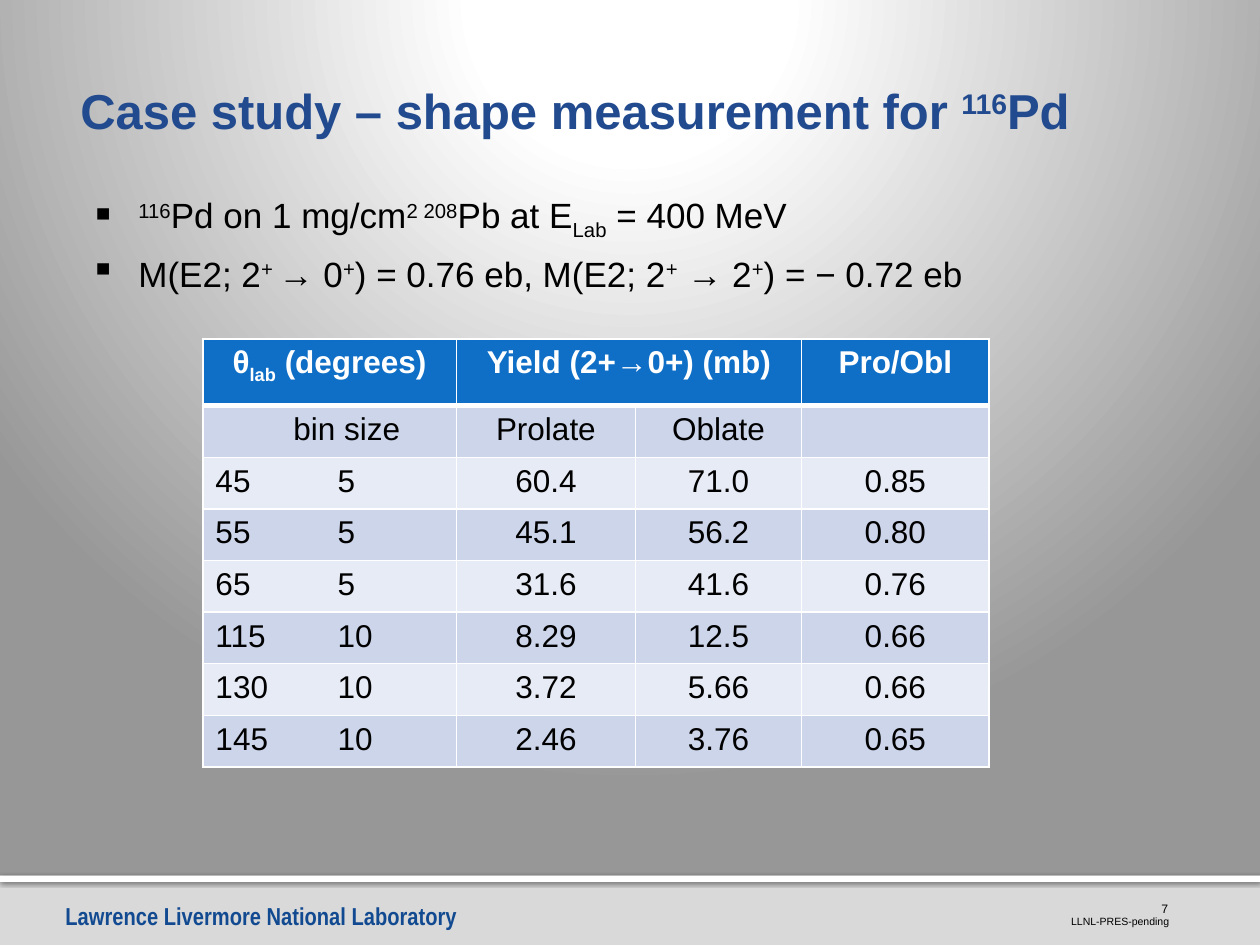
"""Build the slide on the shape measurement case study for 116Pd."""
from pptx import Presentation
from pptx.dml.color import RGBColor
from pptx.enum.shapes import MSO_SHAPE
from pptx.enum.text import MSO_ANCHOR, MSO_AUTO_SIZE, PP_ALIGN
from pptx.oxml import parse_xml
from pptx.oxml.ns import nsdecls, qn
from pptx.util import Cm, Pt

RECTANGLE = MSO_SHAPE.RECTANGLE
TOP, BOTTOM = MSO_ANCHOR.TOP, MSO_ANCHOR.BOTTOM
LEFT, CENTER, RIGHT = PP_ALIGN.LEFT, PP_ALIGN.CENTER, PP_ALIGN.RIGHT
FIT_SHAPE = MSO_AUTO_SIZE.SHAPE_TO_FIT_TEXT

BLACK = RGBColor(0x00, 0x00, 0x00)
WHITE = RGBColor(0xFF, 0xFF, 0xFF)
TITLE_BLUE = RGBColor(0x21, 0x4A, 0x8F)
FOOTER_BLUE = RGBColor(0x12, 0x4A, 0x91)
HEADER_BLUE = RGBColor(0x0F, 0x6F, 0xC6)
FOOTER_GRAY = RGBColor(0xD9, 0xD9, 0xD9)
EDGE_GRAY = RGBColor(0x97, 0x97, 0x97)
BANDS = (RGBColor(0xCC, 0xD5, 0xEA), RGBColor(0xE7, 0xEB, 0xF5))

SUPER, SUB = 30, -25
GRADIENT = ((0, WHITE), (20, WHITE), (100, EDGE_GRAY))

BARS = (
    (1.4, FOOTER_GRAY, 38, 3.1, 2),
    (0.13, WHITE, 60, 2.5, 0.8),
)
TITLE = [("Case study – shape measurement for ", 0), ("116", SUPER), ("Pd", 0)]
BULLETS = [
    [("116", SUPER), ("Pd on 1 mg/cm", 0), ("2 208", SUPER), ("Pb at E", 0),
     ("Lab", SUB), (" = 400 MeV", 0)],
    [("M(E2; 2", 0), ("+ ", SUPER), ("→ 0", 0), ("+", SUPER),
     (") = 0.76 eb, M(E2; 2", 0), ("+", SUPER), (" → 2", 0), ("+", SUPER),
     (") = − 0.72 eb", 0)],
]
HEADERS = {
    0: [("θ", 0), ("lab", SUB), (" (degrees)", 0)],
    1: [("Yield (2+→0+) (mb)", 0)],
    3: [("Pro/Obl", 0)],
}
ROWS = [
    ("bin size", "Prolate", "Oblate", ""),
    ("45\t5", "60.4", "71.0", "0.85"),
    ("55\t5", "45.1", "56.2", "0.80"),
    ("65\t5", "31.6", "41.6", "0.76"),
    ("115\t10", "8.29", "12.5", "0.66"),
    ("130\t10", "3.72", "5.66", "0.66"),
    ("145\t10", "2.46", "3.76", "0.65"),
]
COLUMN_WIDTHS = (5.11, 3.61, 3.35, 3.78)
HEADER_HEIGHT, ROW_HEIGHT = 1.35, 1.04
BIN_INDENT, BIN_TAB = 1.57, 2.46
BULLET_INDENT = 0.97


def drawing(tag, attributes="", content=""):
    return parse_xml(f'<a:{tag} {nsdecls("a")} {attributes}>{content}</a:{tag}>')


def solid(color, alpha=100):
    return f'<a:srgbClr val="{color}"><a:alpha val="{alpha * 1000}"/></a:srgbClr>'


def add_tab(paragraph, position):
    stop = f'<a:tab pos="{Cm(position)}" algn="l"/>'
    paragraph._p.get_or_add_pPr().append(drawing("tabLst", content=stop))


def add_runs(paragraph, runs, size, color, bold=False, font="Arial", align=LEFT):
    paragraph.alignment = align
    for text, baseline in runs:
        run = paragraph.add_run()
        run.text = text
        run.font.name, run.font.size, run.font.bold = font, Pt(size), bold
        run.font.color.rgb = color
        if baseline:
            run.font._element.set("baseline", str(baseline * 1000))


def add_box(slide, place, anchor=TOP, insets=(0.25, 0.13, 0.25, 0.13), wrap=True, grow=False):
    frame = slide.shapes.add_textbox(*map(Cm, place)).text_frame
    frame.word_wrap = wrap
    frame.vertical_anchor = anchor
    frame.margin_left, frame.margin_top, frame.margin_right, frame.margin_bottom = map(Cm, insets)
    if grow:
        frame.auto_size = FIT_SHAPE
    return frame


def paint_background(slide):
    slide.background.fill.gradient()
    gradient = slide.element.find(".//" + qn("a:gradFill"))
    for child in list(gradient):
        gradient.remove(child)
    stops = "".join(f'<a:gs pos="{at * 1000}">{solid(color)}</a:gs>' for at, color in GRADIENT)
    gradient.append(drawing("gsLst", content=stops))
    focus = '<a:fillToRect l="10000" t="-25000" r="10000" b="125000"/>'
    gradient.append(drawing("path", 'path="circle"', focus))


def add_bar(slide, height, color, alpha, blur, distance):
    shape = slide.shapes.add_shape(RECTANGLE, 0, Cm(17.65), Cm(25.4), Cm(height))
    shape.fill.solid()
    shape.fill.fore_color.rgb = color
    shape.line.fill.background()
    shadow = (f'<a:outerShdw blurRad="{Pt(blur)}" dist="{Pt(distance)}" dir="5400000" '
              f'rotWithShape="0">{solid(BLACK, alpha)}</a:outerShdw>')
    shape._element.spPr.append(drawing("effectLst", content=shadow))


def add_footer(slide):
    for bar in BARS:
        add_bar(slide, *bar)
    laboratory = add_box(slide, (1.07, 18.03, 8.48, 0.86), grow=True)
    add_runs(laboratory.paragraphs[0], [("Lawrence Livermore National Laboratory", 0)],
             14, FOOTER_BLUE, True, "Arial Narrow")
    release = add_box(slide, (21.56, 18.31, 2.26, 0.38), BOTTOM, (0, 0.13, 0.25, 0), False, True)
    add_runs(release.paragraphs[0], [("LLNL-PRES-pending", 0)], 6, BLACK, align=RIGHT)
    number = add_box(slide, (22.81, 18.03, 0.99, 0.43))
    add_runs(number.paragraphs[0], [("7", 0)], 7, BLACK, align=RIGHT)


def add_bullets(slide):
    frame = add_box(slide, (1.57, 3.78, 20.9, 2.18), grow=True)
    for index, runs in enumerate(BULLETS):
        paragraph = frame.add_paragraph() if index else frame.paragraphs[0]
        properties = paragraph._p.get_or_add_pPr()
        properties.set("marL", str(Cm(BULLET_INDENT)))
        properties.set("indent", str(-Cm(BULLET_INDENT)))
        properties.append(drawing("buChar", 'char="▪"'))
        add_tab(paragraph, BULLET_INDENT)
        paragraph.space_before = Pt(3 if index else 0)
        paragraph.space_after = Pt(3)
        add_runs(paragraph, runs, 20, BLACK)


def style_cell(cell, color, top, bottom):
    properties = cell._tc.get_or_add_tcPr()
    for side, width in (("L", 1), ("R", 1), ("T", top), ("B", bottom)):
        properties.append(drawing(f"ln{side}", f'w="{Pt(width)}"',
                                  f"<a:solidFill>{solid(WHITE)}</a:solidFill>"))
    cell.fill.solid()
    cell.fill.fore_color.rgb = color


def add_yield_table(slide):
    height = HEADER_HEIGHT + ROW_HEIGHT * len(ROWS)
    table = slide.shapes.add_table(len(ROWS) + 1, len(COLUMN_WIDTHS), Cm(4.09), Cm(6.83),
                                   Cm(sum(COLUMN_WIDTHS)), Cm(height)).table
    for column, width in zip(table.columns, COLUMN_WIDTHS):
        column.width = Cm(width)
    for index, row in enumerate(table.rows):
        row.height = Cm(ROW_HEIGHT if index else HEADER_HEIGHT)
        for cell in row.cells:
            color = BANDS[(index - 1) % 2] if index else HEADER_BLUE
            style_cell(cell, color, 3 if index == 1 else 1, 1 if index else 3)
    table.cell(0, 1).merge(table.cell(0, 2))
    for column, runs in HEADERS.items():
        add_runs(table.cell(0, column).text_frame.paragraphs[0], runs, 18, WHITE, True, align=CENTER)
    for row, values in enumerate(ROWS, 1):
        for column, text in enumerate(values):
            paragraph = table.cell(row, column).text_frame.paragraphs[0]
            if "\t" in text:
                add_tab(paragraph, BIN_TAB)
            elif column == 0:
                paragraph._p.get_or_add_pPr().set("marL", str(Cm(BIN_INDENT)))
            if text:
                add_runs(paragraph, [(text, 0)], 18, BLACK, align=CENTER if column else LEFT)


def main():
    presentation = Presentation()
    presentation.slide_width, presentation.slide_height = Cm(25.4), Cm(19.05)
    slide = presentation.slides.add_slide(presentation.slide_layouts[6])
    paint_background(slide)
    add_footer(slide)
    title = add_box(slide, (1.37, 1.24, 22.56, 1.7), BOTTOM, (0.25, 0.13, 0.13, 0.13))
    title.paragraphs[0].line_spacing = Pt(38)
    add_runs(title.paragraphs[0], TITLE, 28, TITLE_BLUE, True)
    add_bullets(slide)
    add_yield_table(slide)
    presentation.save("out.pptx")


if __name__ == "__main__":
    main()
